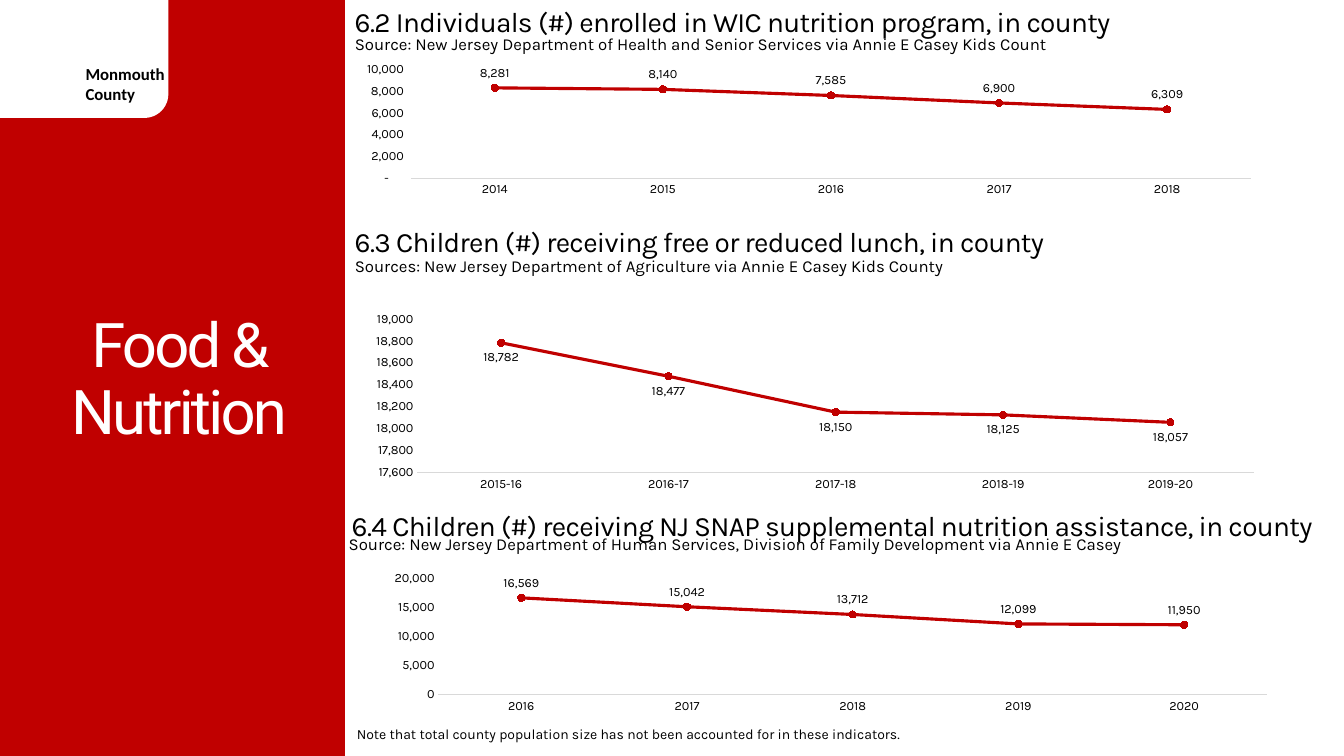
from lxml import etree
from pptx import Presentation
from pptx.chart.data import CategoryChartData
from pptx.dml.color import RGBColor
from pptx.enum.chart import XL_CHART_TYPE as CT, XL_LABEL_POSITION as LP
from pptx.enum.chart import XL_MARKER_STYLE as MS, XL_TICK_MARK as TM
from pptx.enum.shapes import MSO_SHAPE as SH
from pptx.enum.text import MSO_ANCHOR, MSO_AUTO_SIZE, PP_ALIGN
from pptx.oxml.ns import qn
from pptx.util import Inches, Pt

RED, BLACK, WHITE, GREY = "C00000", "000000", "FFFFFF", "D9D9D9"


def style(font, size, name="Karla", color=BLACK):
    font.size, font.name = Pt(size), name
    font.color.rgb = RGBColor.from_string(color)


def add_text(x, y, w, h, text, size, name="Karla", bold=None, spacing=0):
    tf = s.shapes.add_textbox(Inches(x), Inches(y), Inches(w), Inches(h)).text_frame
    tf.word_wrap = True
    r = tf.paragraphs[0].add_run()
    r.text = text
    style(r.font, size, name)
    r.font.bold = bold
    if spacing:
        r.font._element.set("spc", str(spacing))


prs = Presentation()
prs.slide_width, prs.slide_height = Inches(13.33), Inches(7.5)
s = prs.slides.add_slide(prs.slide_layouts[5])

panels = [
    (SH.RECTANGLE, 0, 0, 3.42, 7.5, RED),
    (SH.ROUNDED_RECTANGLE, -0.33, -0.25, 2, 1.42, WHITE),
]
for shape, x, y, w, h, color in panels:
    sp = s.shapes.add_shape(shape, Inches(x), Inches(y), Inches(w), Inches(h))
    sp.shadow.inherit = False
    sp.fill.solid()
    sp.fill.fore_color.rgb = RGBColor.from_string(color)
    sp.line.fill.background()
add_text(0.75, 0.58, 1.08, 0.5, "Monmouth County", 12, "Calibri", True)

title = s.shapes.title
s.shapes._spTree.append(title._element)
title.left, title.top = Inches(0), Inches(0.78)
title.width, title.height = Inches(3.55), Inches(6)
tf = title.text_frame
tf.word_wrap, tf.auto_size = True, MSO_AUTO_SIZE.NONE
tf.vertical_anchor = MSO_ANCHOR.MIDDLE
p = tf.paragraphs[0]
p.alignment, p.line_spacing = PP_ALIGN.CENTER, 0.9
r = p.add_run()
r.text = "Food & Nutrition"
style(r.font, 44, "Roboto", WHITE)
r.font._element.set("spc", "-200")

ACCOUNTING = r'_(* #,##0_);_(* \(#,##0\);_(* "-"??_);_('
sections = [
    dict(
        head=(3.42, 0, "6.2 Individuals (#) enrolled in WIC nutrition program, in county"),
        source=(3.42, 0.29, "Source: New Jersey Department of Health and Senior Services via Annie E Casey Kids Count"),
        box=(3.47, 0.58, 9.15, 1.53), plot=(0.066, 0.069, 0.911, 0.71),
        cats=["2014", "2015", "2016", "2017", "2018"],
        vals=[8281, 8140, 7585, 6900, 6309],
        scale=(0, 10000, 2000), fmt=ACCOUNTING, pos=LP.ABOVE,
    ),
    dict(
        head=(3.42, 2.18, "6.3 Children (#) receiving free or reduced lunch, in county"),
        source=(3.42, 2.49, "Sources: New Jersey Department of Agriculture via Annie E Casey Kids County"),
        box=(3.55, 3.06, 9.08, 1.86), plot=(0.065, 0.056, 0.914, 0.82),
        cats=["2015-16", "2016-17", "2017-18", "2018-19", "2019-20"],
        vals=[18782, 18477, 18150, 18125, 18057],
        scale=(17600, 19000, 200), fmt="#,##0", pos=LP.BELOW,
    ),
    dict(
        head=(3.39, 5, "6.4 Children (#) receiving NJ SNAP supplemental nutrition assistance, in county"),
        source=(3.36, 5.25, "Source: New Jersey Department of Human Services, Division of Family Development via Annie E Casey"),
        box=(3.55, 5.66, 9.08, 1.55), plot=(0.088, 0.046, 0.905, 0.748),
        cats=["2016", "2017", "2018", "2019", "2020"],
        vals=[16569, 15042, 13712, 12099, 11950],
        scale=(0, 20000, 5000), fmt="#,##0", pos=LP.ABOVE,
    ),
]

for sec in sections:
    x, y, text = sec["head"]
    add_text(x, y, 9.86, 0.44, text, 20, spacing=-50)
    x, y, text = sec["source"]
    add_text(x, y, 9.22, 0.3, text, 12)

    data = CategoryChartData(number_format=sec["fmt"])
    data.categories = sec["cats"]
    data.add_series("Series 1", sec["vals"])
    box = [Inches(v) for v in sec["box"]]
    chart = s.shapes.add_chart(CT.LINE_MARKERS, *box, data).chart
    chart.has_title = chart.has_legend = False
    style(chart.font, 10, "Calibri")

    cat, val = chart.category_axis, chart.value_axis
    for axis in (cat, val):
        axis.major_tick_mark = axis.minor_tick_mark = TM.NONE
        axis.has_major_gridlines = False
        style(axis.tick_labels.font, 9)
    cat.format.line.color.rgb = RGBColor.from_string(GREY)
    cat.format.line.width = Pt(0.75)
    val.format.line.fill.background()
    val.minimum_scale, val.maximum_scale, val.major_unit = sec["scale"]
    val.tick_labels.number_format = sec["fmt"]
    val.tick_labels.number_format_is_linked = False

    plot = chart.plots[0]
    plot.vary_by_categories = False
    line = plot.series[0]
    line.smooth = False
    line.format.line.color.rgb = RGBColor.from_string(RED)
    line.format.line.width = Pt(2.25)
    line.marker.style, line.marker.size = MS.CIRCLE, 5
    line.marker.format.fill.solid()
    line.marker.format.fill.fore_color.rgb = RGBColor.from_string(RED)
    line.marker.format.line.color.rgb = RGBColor.from_string(RED)
    labels = line.data_labels
    labels.show_value, labels.position = True, sec["pos"]
    labels.number_format, labels.number_format_is_linked = sec["fmt"], False
    style(labels.font, 9)

    area = chart._chartSpace.chart.plotArea
    for old in area.findall(qn("c:layout")):
        area.remove(old)
    layout = etree.Element(qn("c:layout"))
    area.insert(0, layout)
    manual = etree.SubElement(layout, qn("c:manualLayout"))
    settings = [("layoutTarget", "inner"), ("xMode", "edge"), ("yMode", "edge")]
    settings += zip("xywh", sec["plot"])
    for tag, value in settings:
        etree.SubElement(manual, qn("c:" + tag)).set("val", str(value))

add_text(3.44, 7.15, 7.28, 0.44, "Note that total county population size has not been accounted for in these indicators.", 10)

prs.save("out.pptx")
